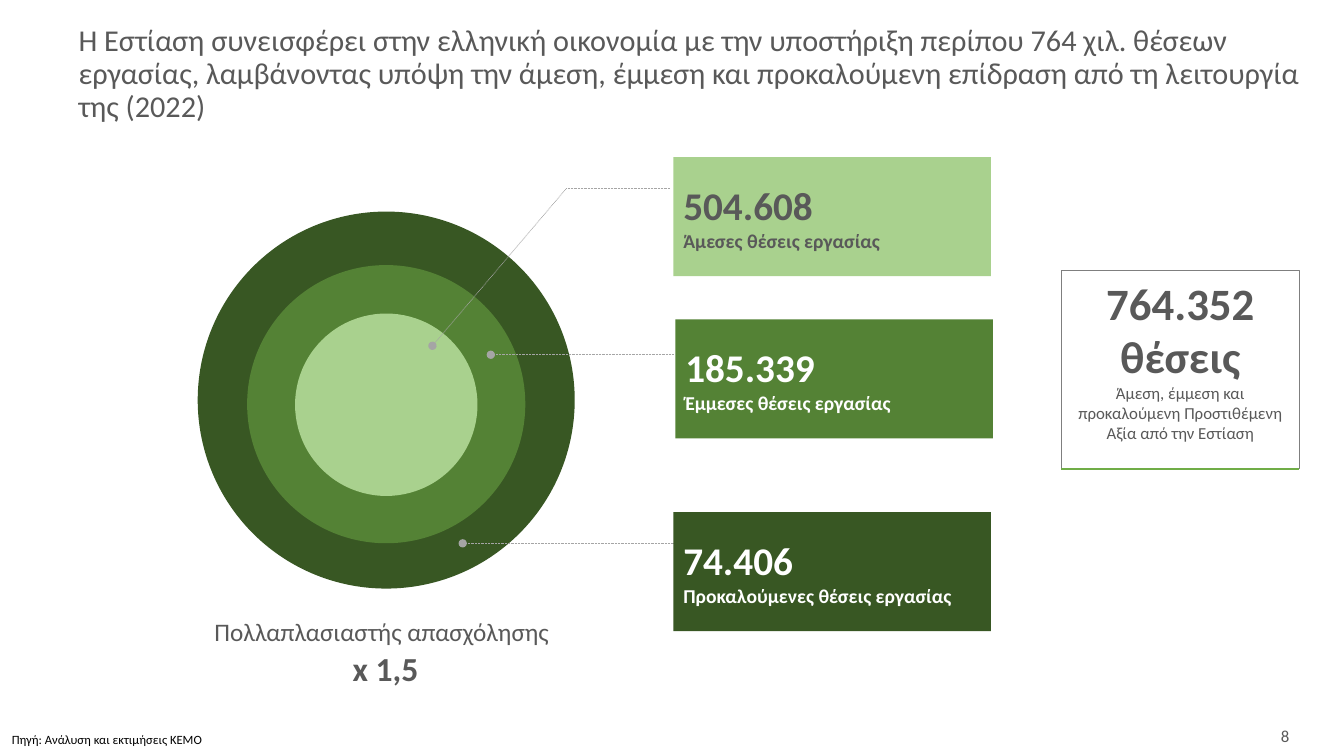
"""Build the slide on the jobs supported by food service."""
from lxml.etree import SubElement
from pptx import Presentation
from pptx.dml.color import RGBColor
from pptx.enum.dml import MSO_LINE
from pptx.enum.shapes import MSO_CONNECTOR, MSO_SHAPE
from pptx.enum.text import MSO_ANCHOR, PP_ALIGN
from pptx.oxml.ns import qn
from pptx.util import Pt

COLORS = {
    "light": "A9D18E", "medium": "548235", "dark": "385723", "accent": "70AD47",
    "text": "595959", "leader": "A5A5A5", "frame": "7F7F7F",
    "white": "FFFFFF", "black": "000000",
}
TITLE = (
    "Η Εστίαση συνεισφέρει στην ελληνική οικονομία με την υποστήριξη περίπου 764 χιλ. "
    "θέσεων εργασίας, λαμβάνοντας υπόψη την άμεση, έμμεση και προκαλούμενη επίδραση "
    "από τη λειτουργία της (2022)"
)
PAGE_NUMBER = "8"
SOURCE = "Πηγή: Ανάλυση και εκτιμήσεις ΚΕΜΟ"
MULTIPLIER = [
    [("Πολλαπλασιαστής απασχόλησης", 18, False), (" ", 24, False)],
    [("x 1,5", 24, True)],
]
TOTAL = [
    [("764.352 θέσεις", 32, True)],
    [("Άμεση, έμμεση και προκαλούμενη Προστιθέμενη Αξία από την Εστίαση", 12, False)],
]
RING_CENTER_X = 275.9
RINGS = [("dark", 285.8, 269.3), ("medium", 288.7, 198.7), ("light", 289.1, 130.3)]
CARD_SIZE = (226.8, 85)
CARDS = [
    ("504.608", "Άμεσες θέσεις εργασίας", "light", "text", 481, 112.3),
    ("185.339", "Έμμεσες θέσεις εργασίας", "medium", "white", 482.4, 228.2),
    ("74.406", "Προκαλούμενες θέσεις εργασίας", "dark", "white", 481, 365.8),
]
LEADERS = [
    ((308.9, 247), (404.6, 134.6), True),
    ((404.6, 134.6), (478.1, 134.6), False),
    ((350.6, 253.4), (481, 253.4), True),
    ((330.5, 388.1), (483.8, 388.1), True),
]
TOTAL_BOX = (758.2, 193, 169.9, 141.8)


def rgb(name):
    return RGBColor.from_string(COLORS[name])


def write(shape, paragraphs, color="text", align=PP_ALIGN.LEFT,
          anchor=MSO_ANCHOR.MIDDLE, line_spacing=None, bottom=3.6):
    frame = shape.text_frame
    frame.word_wrap = True
    frame.vertical_anchor = anchor
    frame.margin_bottom = Pt(bottom)
    for index, spans in enumerate(paragraphs):
        para = frame.add_paragraph() if index else frame.paragraphs[0]
        para.alignment = align
        para.line_spacing = line_spacing
        for text, size, bold in spans:
            span = para.add_run()
            span.text = text
            span.font.name = "Calibri"
            span.font.size = Pt(size)
            span.font.bold = bold
            span.font.color.rgb = rgb(color)


def add_box(page, left, top, width, height):
    return page.shapes.add_textbox(Pt(left), Pt(top), Pt(width), Pt(height))


def add_filled(page, kind, left, top, width, height, fill, line=None):
    shape = page.shapes.add_shape(kind, Pt(left), Pt(top), Pt(width), Pt(height))
    shape.shadow.inherit = False
    shape.fill.solid()
    shape.fill.fore_color.rgb = rgb(fill)
    if line:
        shape.line.color.rgb = rgb(line)
        shape.line.width = Pt(0.75)
    else:
        shape.line.fill.background()
    return shape


def add_line(page, start, end, color, width, dash=None, dot=False):
    line = page.shapes.add_connector(
        MSO_CONNECTOR.STRAIGHT, *(Pt(value) for value in (*start, *end)))
    line.line.color.rgb = rgb(color)
    line.line.width = Pt(width)
    if dash:
        line.line.dash_style = dash
    properties = line.element.spPr
    if dot:
        SubElement(properties.find(qn("a:ln")), qn("a:headEnd"), type="oval")
    SubElement(properties, qn("a:effectLst"))


def main():
    deck = Presentation()
    deck.slide_width, deck.slide_height = Pt(960), Pt(540)
    page = deck.slides.add_slide(deck.slide_layouts[6])

    write(add_box(page, 49, 16.6, 896.4, 73.4), [[(TITLE, 21.6, False)]], line_spacing=0.9)
    write(add_box(page, 704.2, 511.2, 223.9, 28.8), [[(PAGE_NUMBER, 12, False)]],
          align=PP_ALIGN.RIGHT)
    for fill, center_y, size in RINGS:
        add_filled(page, MSO_SHAPE.OVAL, RING_CENTER_X - size / 2, center_y - size / 2,
                   size, size, fill)
    for start, end, dot in LEADERS:
        add_line(page, start, end, "leader", 0.5, MSO_LINE.ROUND_DOT, dot)
    for number, label, fill, color, left, top in CARDS:
        card = add_filled(page, MSO_SHAPE.RECTANGLE, left, top, *CARD_SIZE, fill)
        write(card, [[(number, 28, True)], [(label, 14, True)]], color=color)
    write(add_box(page, 136.8, 429.1, 277.2, 67.7), MULTIPLIER, align=PP_ALIGN.CENTER)
    write(add_box(page, 1.4, 519.1, 449.3, 18), [[(SOURCE, 9, False)]],
          color="black", anchor=MSO_ANCHOR.TOP)

    left, top, width, height = TOTAL_BOX
    total = add_filled(page, MSO_SHAPE.RECTANGLE, *TOTAL_BOX, "white", "frame")
    write(total, TOTAL, align=PP_ALIGN.CENTER, bottom=18)
    add_line(page, (left, top + height), (left + width, top + height), "accent", 1.5)
    deck.save("out.pptx")


if __name__ == "__main__":
    main()
